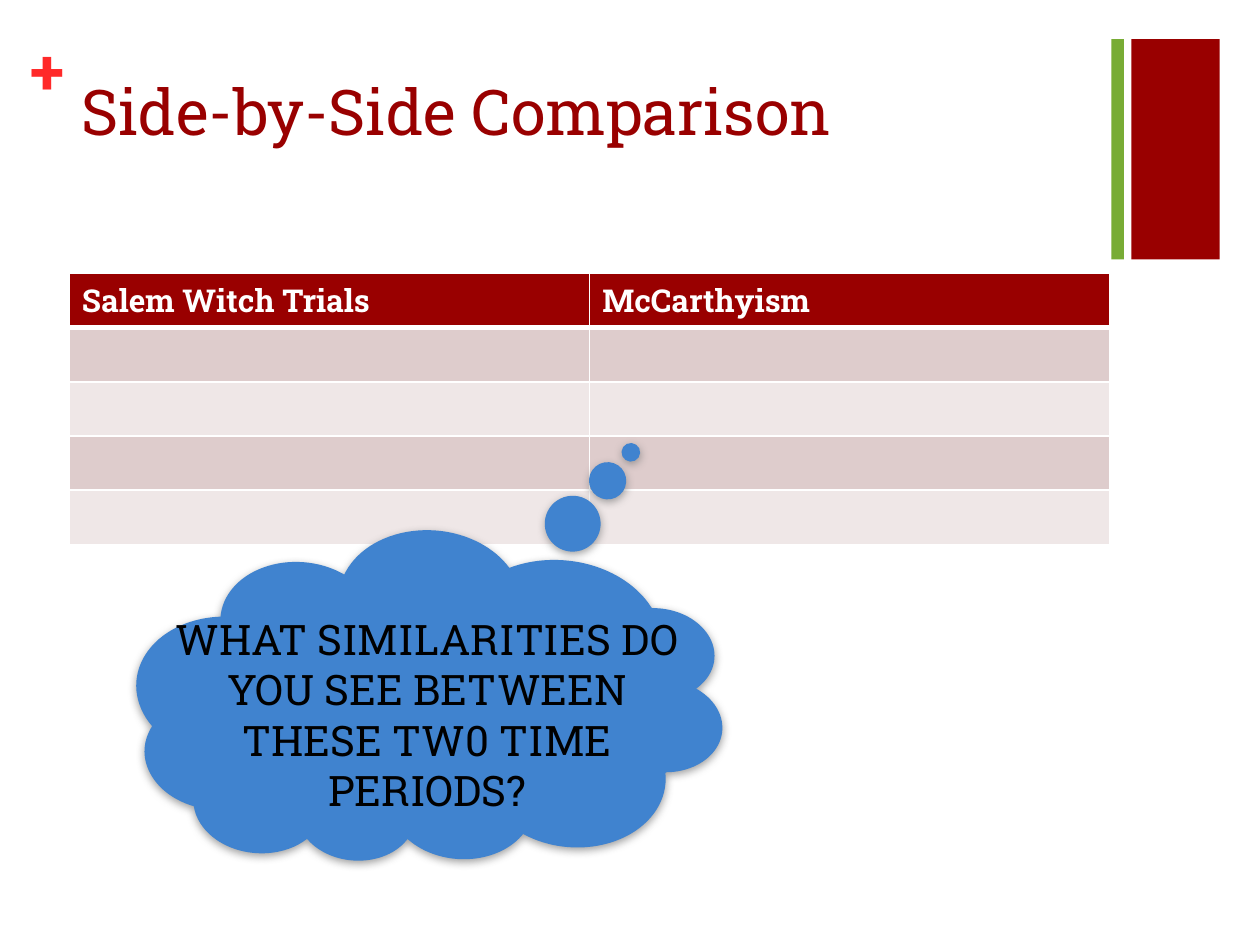
import pptx
import pptx.util
import pptx.oxml
import pptx.oxml.ns
import pptx.dml.color
import pptx.enum.shapes
import pptx.enum.text
import lxml.etree

Inches = pptx.util.Inches
Pt = pptx.util.Pt
Kind = pptx.enum.shapes.MSO_SHAPE
Align = pptx.enum.text.PP_ALIGN
qn = pptx.oxml.ns.qn

COLORS = {
    "red": "990000",
    "plus": "FF2929",
    "green": "78AC35",
    "blue": "4083CF",
    "dark": "DECCCC",
    "light": "EFE7E7",
    "white": "FFFFFF",
    "black": "000000",
    "gray": "808080",
}


class Deck:
    font = "Roboto Slab"

    def __init__(self):
        self.file = pptx.Presentation()
        self.file.slide_width = Inches(10)
        self.file.slide_height = Inches(7.5)
        self.slide = self.file.slides.add_slide(self.file.slide_layouts[6])

    def color(self, name):
        return pptx.dml.color.RGBColor.from_string(COLORS[name])

    def paint(self, item, name):
        item.fill.solid()
        item.fill.fore_color.rgb = self.color(name)

    def add_run(self, frame, words, size, color, bold=False, align=Align.LEFT):
        line = frame.paragraphs[0]
        line.alignment = align
        run = line.add_run()
        run.text = words
        run.font.name = self.font
        run.font.size = Pt(size)
        run.font.bold = bold
        run.font.color.rgb = self.color(color)

    def text(self, box, words, size, color, inset=None, **style):
        frame = self.slide.shapes.add_textbox(*map(Inches, box)).text_frame
        frame.word_wrap = True
        if inset is not None:
            frame.margin_left = frame.margin_right = Inches(inset)
            frame.margin_top = frame.margin_bottom = Inches(inset)
        self.add_run(frame, words, size, color, **style)

    def shape(self, kind, box, color):
        item = self.slide.shapes.add_shape(kind, *map(Inches, box))
        item.shadow.inherit = False
        self.paint(item, color)
        item.line.fill.background()
        return item

    def cloud(self, box, color, turn, tail):
        item = self.shape(Kind.CLOUD_CALLOUT, box, color)
        item.rotation = turn
        for i, value in enumerate(tail):
            item.adjustments[i] = value
        effects = item._element.spPr.find(qn("a:effectLst"))
        shade = lxml.etree.SubElement(
            effects, qn("a:outerShdw"), blurRad=str(Pt(5)), dist=str(Pt(2)),
            dir="5400000", rotWithShape="0")
        tint = lxml.etree.SubElement(shade, qn("a:srgbClr"), val=COLORS["gray"])
        lxml.etree.SubElement(tint, qn("a:alpha"), val="75000")

    def border(self, cell, sides):
        props = cell._tc.get_or_add_tcPr()
        for side, width in sides.items():
            line = lxml.etree.SubElement(props, qn("a:ln" + side), w=str(Pt(width)))
            fill = lxml.etree.SubElement(line, qn("a:solidFill"))
            lxml.etree.SubElement(fill, qn("a:srgbClr"), val=COLORS["white"])

    def table(self, left, top, width, height, heads, fills):
        count = len(fills)
        grid = self.slide.shapes.add_table(
            count, len(heads), Inches(left), Inches(top),
            Inches(width), Inches(height * count)).table
        for r, fill in enumerate(fills):
            grid.rows[r].height = Inches(height)
            for c, head in enumerate(heads):
                cell = grid.cell(r, c)
                upper = 3 if r == 1 else 1
                lower = 3 if r == 0 else 1
                self.border(cell, {"L": 1, "R": 1, "T": upper, "B": lower})
                self.paint(cell, fill)
                if r == 0:
                    self.add_run(cell.text_frame, head, 18, "white", bold=True)


def main():
    deck = Deck()
    deck.shape(Kind.RECTANGLE, (8.98, 0.31, 0.7, 1.75), "red")
    deck.text((0.24, 0.25, 0.29, 0.61), "+", 36, "plus", inset=0, bold=True)
    deck.shape(Kind.RECTANGLE, (8.82, 0.31, 0.1, 1.75), "green")
    deck.text((0.55, 0.53, 8.26, 1.22), "Side-by-Side Comparison", 36, "red")
    deck.table(0.55, 2.17, 8.26, 0.43,
               ["Salem Witch Trials", "McCarthyism"],
               ["red"] + ["dark", "light"] * 2)
    deck.cloud((1.08, 4.22, 4.66, 2.66), "blue", 184.3, (-0.31, 0.78))
    deck.text((1.29, 4.82, 4.2, 1.72),
              "WHAT SIMILARITIES DO YOU SEE BETWEEN THESE TW0 TIME PERIODS?",
              24, "black", align=Align.CENTER)
    deck.file.save("out.pptx")


if __name__ == "__main__":
    main()
